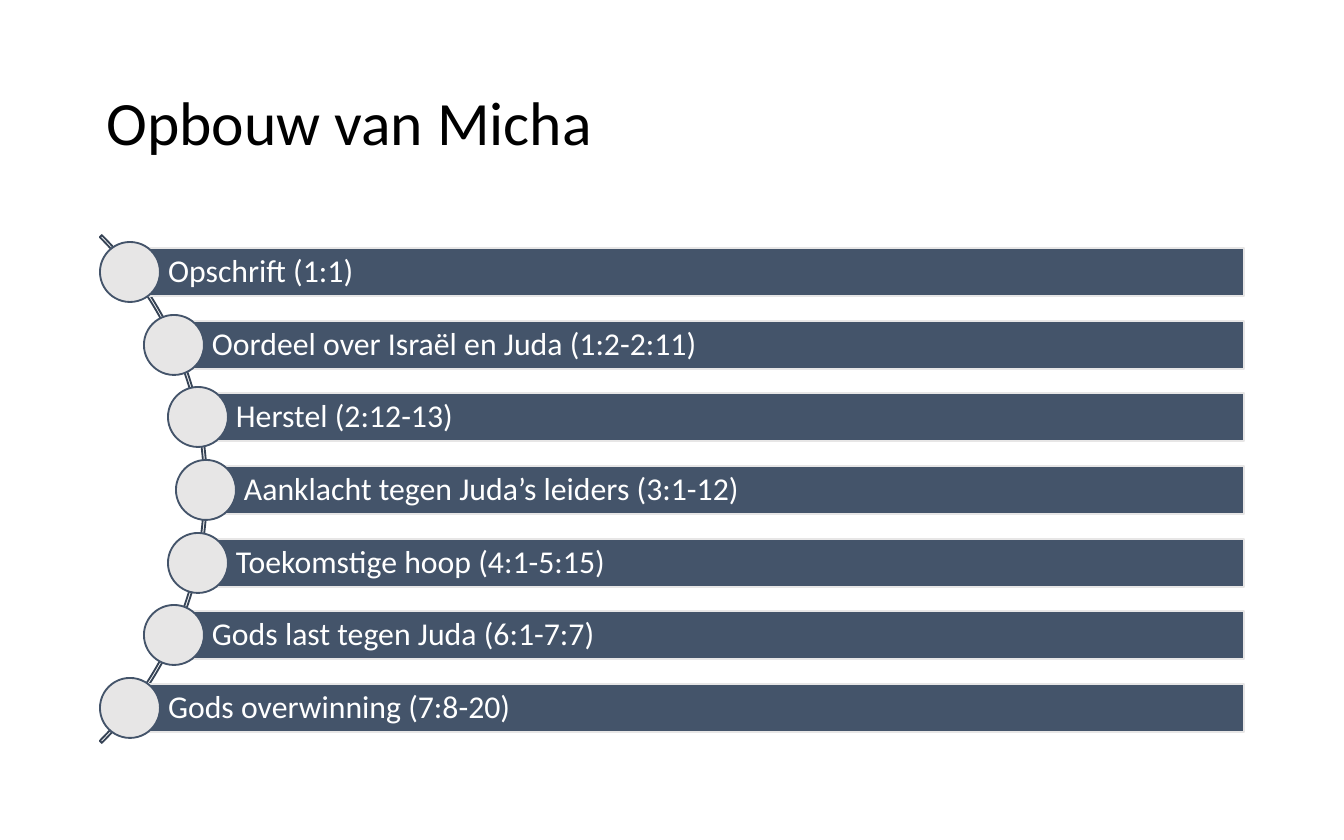
from pptx import Presentation
from pptx.dml.color import RGBColor
from pptx.enum.shapes import MSO_SHAPE
from pptx.enum.text import MSO_ANCHOR, PP_ALIGN
from pptx.util import Pt

ARC, BAR, DOT = MSO_SHAPE.BLOCK_ARC, MSO_SHAPE.RECTANGLE, MSO_SHAPE.OVAL
LEFT, MIDDLE = PP_ALIGN.LEFT, MSO_ANCHOR.MIDDLE
EMU_PER_PX = 914400 / 134.4
NAVY, GREY, ARC_LINE = "44546A", "E7E6E6", "364355"


def px(*lengths):
    return [round(length * EMU_PER_PX) for length in lengths]


def add_part(preset, box, line, fill=None):
    part = slide.shapes.add_shape(preset, *px(*box))
    part.shadow.inherit = False
    if fill:
        part.fill.solid()
        part.fill.fore_color.rgb = RGBColor.from_string(fill)
    else:
        part.fill.background()
    part.line.color.rgb = RGBColor.from_string(line)
    part.line.width = Pt(1)
    return part


prs = Presentation()
prs.slide_width, prs.slide_height = px(1344, 840)
slide = prs.slides.add_slide(prs.slide_layouts[5])

# Title
title = slide.shapes.title
title.left, title.top, title.width, title.height = px(93, 44, 1158, 163)
title.text_frame.text = "Opbouw van Micha"
title.text_frame.vertical_anchor = MIDDLE
heading = title.text_frame.paragraphs[0]
heading.alignment = LEFT
heading.line_spacing = 0.9
heading.font.size = Pt(33)
heading.font.name = "Calibri"
heading.font.color.rgb = RGBColor.from_string("000000")

# Arc behind the sections, from 315 to 45 degrees
arc = add_part(ARC, (-511, 130, 718, 718), ARC_LINE)
for index, value in enumerate((189, 27, 0.004)):
    arc.adjustments[index] = value

# Sections: centre of the dot, text
sections = [
    (130, "Opschrift (1:1)"),
    (174, "Oordeel over Israël en Juda (1:2-2:11)"),
    (198, "Herstel (2:12-13)"),
    (206, "Aanklacht tegen Juda’s leiders (3:1-12)"),
    (198, "Toekomstige hoop (4:1-5:15)"),
    (174, "Gods last tegen Juda (6:1-7:7)"),
    (130, "Gods overwinning (7:8-20)"),
]
FIRST_Y, LAST_Y = 272, 708
BAR_RIGHT, BAR_HEIGHT, DOT_SIZE = 1244, 48, 60
pitch = (LAST_Y - FIRST_Y) / (len(sections) - 1)

for row, (centre_x, wording) in enumerate(sections):
    centre_y = round(FIRST_Y + row * pitch)
    bar = add_part(BAR, (centre_x, centre_y - BAR_HEIGHT // 2,
                         BAR_RIGHT - centre_x, BAR_HEIGHT), GREY, NAVY)
    frame = bar.text_frame
    frame.word_wrap = True
    frame.vertical_anchor = MIDDLE
    (frame.margin_left, frame.margin_top,
     frame.margin_right, frame.margin_bottom) = px(38, 6, 6, 6)
    frame.text = wording
    label = frame.paragraphs[0]
    label.alignment = LEFT
    label.line_spacing = 0.9
    label.font.size = Pt(17)
    label.font.name = "Calibri"
    label.font.color.rgb = RGBColor.from_string("FFFFFF")
    add_part(DOT, (centre_x - DOT_SIZE // 2, centre_y - DOT_SIZE // 2,
                   DOT_SIZE, DOT_SIZE), NAVY, GREY)

prs.save("out.pptx")
